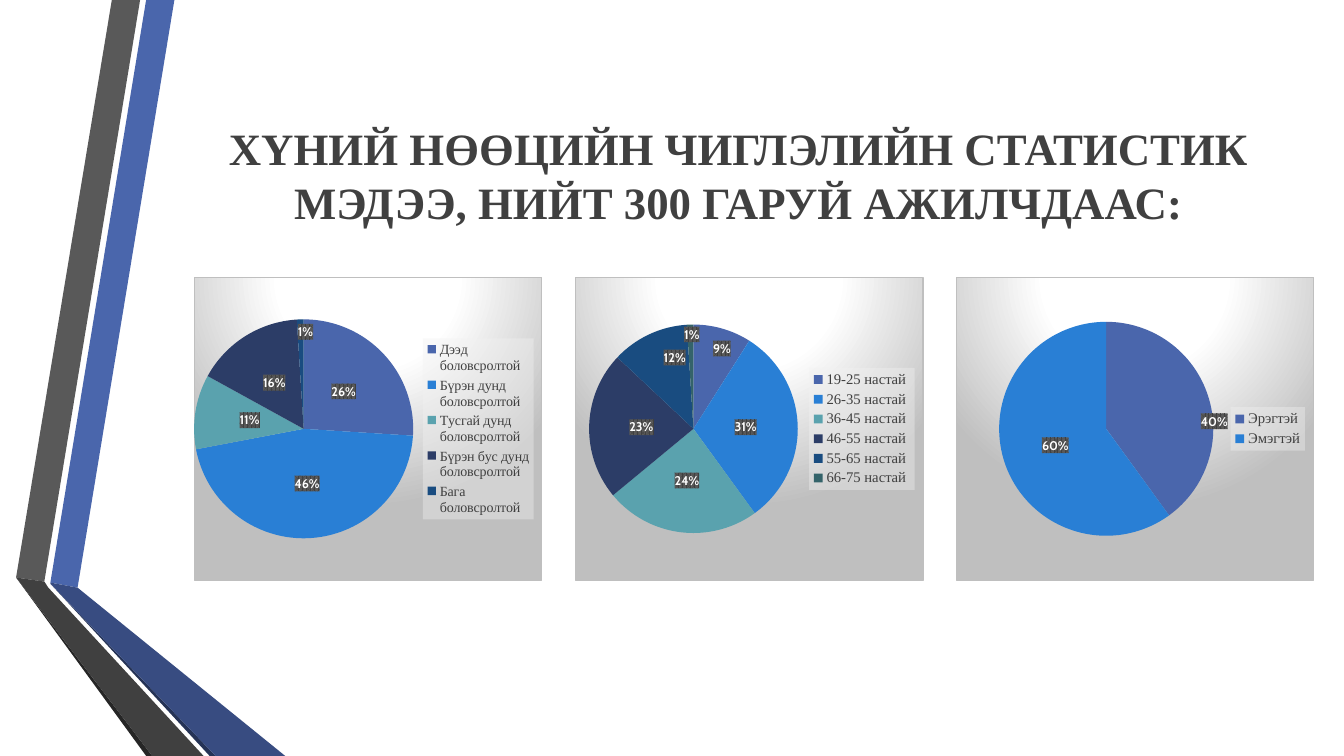
import copy

import pptx
import pptx.chart.data
import pptx.dml.color
import pptx.enum.chart
import pptx.enum.text
import pptx.util
from lxml import etree
from pptx.oxml.ns import nsdecls, qn

RGBColor = pptx.dml.color.RGBColor
Inches, Pt = pptx.util.Inches, pptx.util.Pt

BLUE = RGBColor(0x4A, 0x66, 0xAC)
DARK = RGBColor(0x40, 0x40, 0x40)
GREY = RGBColor(0x59, 0x59, 0x59)
NIGHT = RGBColor(0x26, 0x26, 0x26)
NAVY = RGBColor(0x25, 0x33, 0x56)
INDIGO = RGBColor(0x38, 0x4C, 0x81)
BLACK = RGBColor(0, 0, 0)
WHITE = RGBColor(255, 255, 255)
SLICES = [BLUE, RGBColor(0x29, 0x7F, 0xD5), RGBColor(0x5A, 0xA2, 0xAE),
          RGBColor(0x2C, 0x3D, 0x67), RGBColor(0x19, 0x4C, 0x80),
          RGBColor(0x34, 0x63, 0x6A)]

PANEL_FILL = """<a:gradFill><a:gsLst>
<a:gs pos="0"><a:srgbClr val="FFFFFF"/></a:gs>
<a:gs pos="39000"><a:srgbClr val="FFFFFF"/></a:gs>
<a:gs pos="100000"><a:srgbClr val="BFBFBF"/></a:gs></a:gsLst>
<a:path path="circle"><a:fillToRect l="50000" t="-80000" r="50000" b="180000"/></a:path>
</a:gradFill><a:ln w="9525"><a:solidFill><a:srgbClr val="BFBFBF"/></a:solidFill></a:ln>"""
LEGEND_FILL = """<a:solidFill><a:srgbClr val="F2F2F2"><a:alpha val="39000"/></a:srgbClr>
</a:solidFill><a:ln><a:noFill/></a:ln>"""
LABEL_FILL = """<a:pattFill prst="pct75"><a:fgClr><a:srgbClr val="404040"/></a:fgClr>
<a:bgClr><a:srgbClr val="595959"/></a:bgClr></a:pattFill><a:ln><a:noFill/></a:ln>"""


def chart_part(tag, inner):
    return etree.fromstring(f'<c:{tag} {nsdecls("c", "a")}>{inner}</c:{tag}>')


def manual_layout(**settings):
    inner = "".join(f'<c:{key} val="{value}"/>' for key, value in settings.items())
    return chart_part("layout", f"<c:manualLayout>{inner}</c:manualLayout>")


deck = pptx.Presentation()
deck.slide_width, deck.slide_height = Inches(13.33), Inches(7.5)
page = deck.slides.add_slide(deck.slide_layouts[6])

# Folded ribbons on the left edge, in hundredths of an inch
ribbons = [
    (BLUE, [(50, 578), (77, 583), (173, 0), (145, 0)]),
    (GREY, [(139, 0), (111, 0), (16, 573), (44, 577)]),
    (NIGHT, [(16, 573), (145, 750), (151, 750)]),
    (NAVY, [(50, 579), (208, 750), (214, 750)]),
    (INDIGO, [(50, 578), (50, 579), (214, 750), (283, 750), (77, 583)]),
    (DARK, [(202, 750), (48, 583), (44, 577), (16, 573), (151, 750)]),
]
for color, corners in ribbons:
    outline = page.shapes.build_freeform(*corners[0], scale=Inches(0.01))
    outline.add_line_segments(corners[1:], close=True)
    ribbon = outline.convert_to_shape()
    ribbon.shadow.inherit = False
    ribbon.fill.solid()
    ribbon.fill.fore_color.rgb = color
    ribbon.line.fill.background()

# Title
box = page.shapes.add_textbox(Inches(1.76), Inches(1.07), Inches(11.13), Inches(1.32))
box.text_frame.word_wrap = True
box.text_frame.vertical_anchor = pptx.enum.text.MSO_ANCHOR.MIDDLE
para = box.text_frame.paragraphs[0]
para.text = "ХҮНИЙ НӨӨЦИЙН ЧИГЛЭЛИЙН СТАТИСТИК МЭДЭЭ, НИЙТ 300 ГАРУЙ АЖИЛЧДААС:"
para.alignment = pptx.enum.text.PP_ALIGN.CENTER
para.font.name, para.font.size, para.font.bold = "Times New Roman", Pt(32), True
para.font.color.rgb = DARK

# Pies: width, legend size, plot area, slices, label shifts by slice
pies = [
    (3.46, 10, (0, 0, 0.63, 1),
     {"Дээд боловсролтой": 26, "Бүрэн дунд боловсролтой": 46,
      "Тусгай дунд боловсролтой": 11, "Бүрэн бус дунд боловсролтой": 16,
      "Бага боловсролтой": 1},
     {4: (0.01, -0.14)}),
    (3.46, 10.5, (0.04, 0.12, 0.6, 0.76),
     {"19-25 настай": 9, "26-35 настай": 31, "36-45 настай": 24,
      "46-55 настай": 23, "55-65 настай ": 12, "66-75 настай": 1},
     {0: (0.04, -0.1), 4: (0.01, -0.08), 5: (0, -0.14)}),
    (3.55, 10.5, (0.12, 0.12, 0.6, 0.76),
     {"Эрэгтэй": 40, "Эмэгтэй": 60},
     {0: (0.16, 0.03)}),
]
FIRST_LEFT, STEP = 1.92, 3.78
for column, (width, legend_size, area, shares, shifts) in enumerate(pies):
    data = pptx.chart.data.CategoryChartData()
    data.categories = list(shares)
    data.add_series("Series 1", list(shares.values()))
    chart = page.shapes.add_chart(
        pptx.enum.chart.XL_CHART_TYPE.PIE, Inches(FIRST_LEFT + column * STEP),
        Inches(2.75), Inches(width), Inches(3.01), data).chart
    chart.has_title = False
    chart.font.name, chart.font.size = "Cabin", Pt(10)
    chart.font.color.rgb = BLACK

    # Panel and plot area
    root = chart.element
    root.find(qn("c:chart")).addnext(chart_part("spPr", PANEL_FILL))
    plot_area = root.find(".//" + qn("c:plotArea"))
    for old in plot_area.findall(qn("c:layout")):
        plot_area.remove(old)
    x, y, w, h = area
    plot_area.insert(0, manual_layout(layoutTarget="inner", xMode="edge", yMode="edge",
                                      x=x, y=y, w=w, h=h))

    # Legend
    chart.has_legend = True
    legend = chart.legend
    legend.position = pptx.enum.chart.XL_LEGEND_POSITION.RIGHT
    legend.include_in_layout = False
    legend.font.name, legend.font.size = "Times New Roman", Pt(legend_size)
    legend.font.color.rgb = DARK
    legend_part = root.find(".//" + qn("c:legend"))
    legend_part.find(qn("c:txPr")).addprevious(chart_part("spPr", LEGEND_FILL))

    # Slices
    plot = chart.plots[0]
    plot.vary_by_categories = True
    series = plot.series[0]
    for index in range(len(shares)):
        fill = series.points[index].format.fill
        fill.solid()
        fill.fore_color.rgb = SLICES[index]

    # Percent labels, some moved off the slice centre
    labels = series.data_labels
    labels.show_percentage, labels.show_value = True, False
    labels.number_format, labels.number_format_is_linked = "0%", False
    labels.position = pptx.enum.chart.XL_LABEL_POSITION.CENTER
    labels.font.name, labels.font.size, labels.font.bold = "Cabin", Pt(9), True
    labels.font.color.rgb = WHITE
    label_part = root.find(".//" + qn("c:dLbls"))
    label_part.find(qn("c:txPr")).addprevious(chart_part("spPr", LABEL_FILL))
    shared = [part for part in label_part if part.tag != qn("c:showLeaderLines")]
    for place, (index, (dx, dy)) in enumerate(shifts.items()):
        moved = chart_part("dLbl", f'<c:idx val="{index}"/>')
        moved.append(manual_layout(x=dx, y=dy))
        moved.extend(copy.deepcopy(shared))
        label_part.insert(place, moved)

deck.save("out.pptx")
